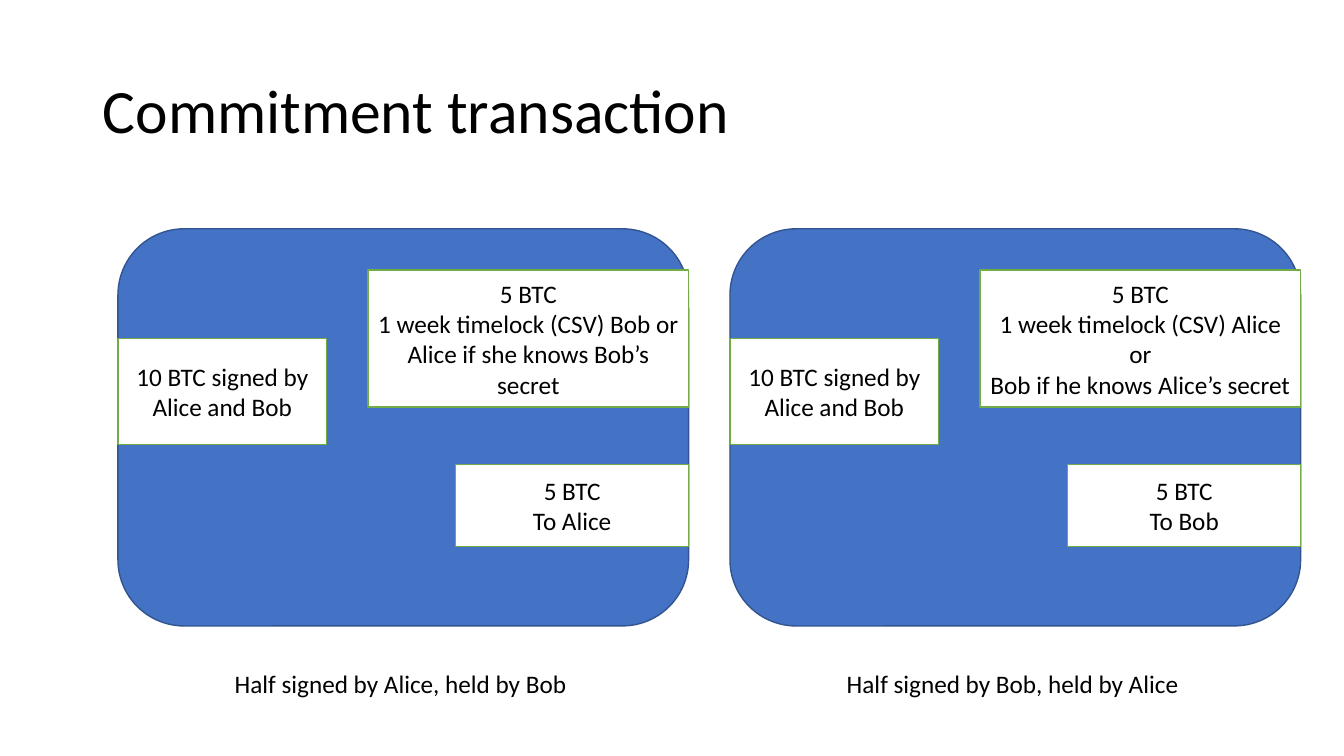
from pptx import Presentation
from pptx import util as u
from pptx.dml.color import RGBColor
from pptx.enum import shapes, text


def rgb(code):
    return RGBColor.from_string(code)


class Deck:
    FONT = {"name": "Calibri", "size": u.Pt(18)}
    INK, PAPER = "000000", "FFFFFF"
    PANEL, PANEL_EDGE, BOX_EDGE = "4472C4", "325491", "70AD47"

    def __init__(self, prs):
        self.s = prs.slides.add_slide(prs.slide_layouts[5])

    def put_lines(self, tf, lines, align, **font):
        """Fill a text frame with one paragraph per line."""
        for i, line in enumerate(lines):
            p = tf.add_paragraph() if i else tf.paragraphs[0]
            p.alignment = align
            r = p.add_run()
            r.text = line
            for key, value in {**self.FONT, **font}.items():
                setattr(r.font, key, value)
            r.font.color.rgb = rgb(self.INK)

    def title(self, line, *place):
        sp = self.s.shapes.title
        sp.left, sp.top, sp.width, sp.height = map(u.Inches, place)
        tf = sp.text_frame
        tf.word_wrap = True
        tf.vertical_anchor = text.MSO_ANCHOR.MIDDLE
        self.put_lines(tf, [line], text.PP_ALIGN.LEFT, size=u.Pt(44))
        tf.paragraphs[0].line_spacing = 0.9

    def shape(self, kind, fill, edge, *place):
        sp = self.s.shapes.add_shape(kind, *map(u.Inches, place))
        sp.shadow.inherit = False
        sp.fill.solid()
        sp.fill.fore_color.rgb = rgb(fill)
        sp.line.color.rgb = rgb(edge)
        sp.line.width = u.Pt(1)
        return sp

    def panel(self, *place):
        self.shape(shapes.MSO_SHAPE.ROUNDED_RECTANGLE,
                   self.PANEL, self.PANEL_EDGE, *place)

    def box(self, lines, *place):
        tf = self.shape(shapes.MSO_SHAPE.RECTANGLE,
                        self.PAPER, self.BOX_EDGE, *place).text_frame
        tf.word_wrap = True
        tf.vertical_anchor = text.MSO_ANCHOR.MIDDLE
        self.put_lines(tf, lines, text.PP_ALIGN.CENTER)

    def caption(self, line, *place):
        tf = self.s.shapes.add_textbox(*map(u.Inches, place)).text_frame
        tf.word_wrap = False
        tf.auto_size = text.MSO_AUTO_SIZE.SHAPE_TO_FIT_TEXT
        self.put_lines(tf, [line], text.PP_ALIGN.LEFT)


def main():
    prs = Presentation()
    prs.slide_width, prs.slide_height = u.Inches(13.33), u.Inches(7.5)
    deck = Deck(prs)
    deck.title("Commitment transaction", 0.92, 0.4, 11.5, 1.45)

    panel_width = 5.66
    transactions = [
        (1.17, "Bob", "Alice", "she"),
        (7.24, "Alice", "Bob", "he"),
    ]
    for left, holder, signer, pronoun in transactions:
        right = left + panel_width
        deck.panel(left, 2.27, panel_width, 3.94)
        deck.box(["10 BTC signed by Alice and Bob"], left, 3.36, 2.07, 1.05)
        deck.box(["5 BTC",
                  f"1 week timelock (CSV) {holder} or",
                  f"{signer} if {pronoun} knows {holder}’s secret"],
                 right - 3.18, 2.68, 3.18, 1.36)
        deck.box(["5 BTC", f"To {signer}"], right - 2.31, 4.61, 2.31, 0.81)
        deck.caption(f"Half signed by {signer}, held by {holder}",
                     left + 1.06, 6.58, 3.53, 0.4)

    prs.save("out.pptx")


if __name__ == "__main__":
    main()
